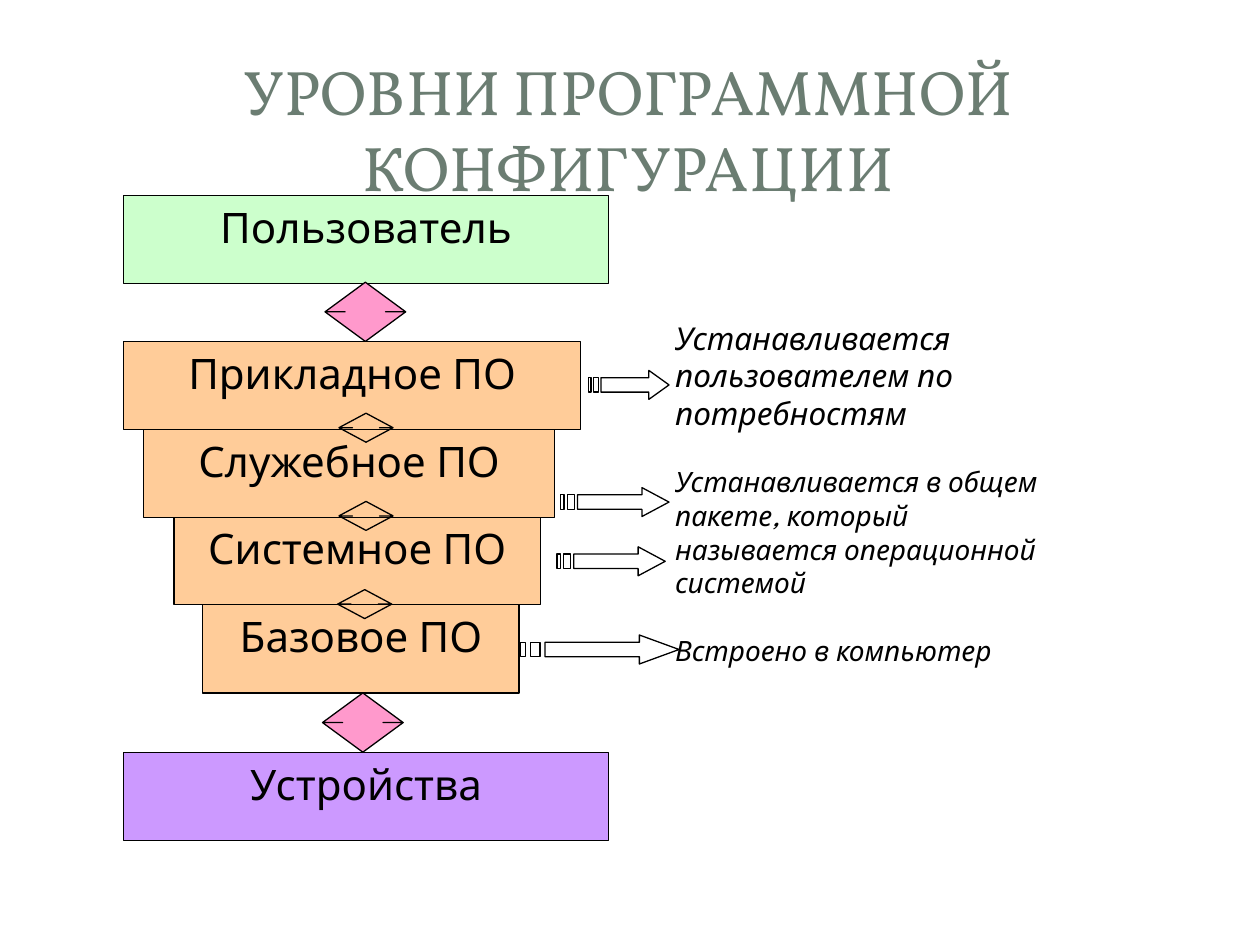
from typing import NamedTuple

from pptx import Presentation
from pptx.dml.color import RGBColor
from pptx.enum.shapes import MSO_SHAPE
from pptx.enum.text import MSO_ANCHOR, MSO_AUTO_SIZE, PP_ALIGN
from pptx.util import Inches, Pt

RECT, UP_DOWN = MSO_SHAPE.RECTANGLE, MSO_SHAPE.UP_DOWN_ARROW
CENTER, LEFT = PP_ALIGN.CENTER, PP_ALIGN.LEFT
TOP, MIDDLE = MSO_ANCHOR.TOP, MSO_ANCHOR.MIDDLE
BODY_FONT, TITLE_FONT = "League Spartan", "Vollkorn"
BLACK, WHITE, ORANGE, PINK = "000000", "FFFFFF", "FFCC99", "FF99CC"
LEVEL_H = 0.7


class Level(NamedTuple):
    text: str
    x: float
    y: float
    w: float
    color: str


class Note(NamedTuple):
    text: str
    y: float
    w: float
    h: float
    size: int


class DoubleArrow(NamedTuple):
    x: float
    y: float
    w: float
    h: float
    color: str | None


class StripedArrow(NamedTuple):
    x: float
    y: float
    w: float


LEVELS = [
    Level("Базовое ПО", 1.61, 4.8, 2.51, ORANGE),
    Level("Системное ПО", 1.38, 4.1, 2.91, ORANGE),
    Level("Служебное ПО", 1.14, 3.41, 3.26, ORANGE),
    Level("Прикладное ПО", 0.98, 2.71, 3.63, ORANGE),
    Level("Пользователь", 0.98, 1.55, 3.85, "CCFFCC"),
    Level("Устройства", 0.98, 5.97, 3.85, "CC99FF"),
]
DOUBLE_ARROWS = [
    DoubleArrow(2.56, 5.5, 0.64, 0.47, PINK),
    DoubleArrow(2.58, 2.24, 0.64, 0.47, PINK),
    DoubleArrow(2.68, 4.68, 0.43, 0.23, None),
    DoubleArrow(2.69, 3.98, 0.43, 0.23, None),
    DoubleArrow(2.69, 3.28, 0.43, 0.23, None),
]
NOTES = [
    Note("Встроено в компьютер", 4.98, 2.78, 0.47, 16),
    Note("Устанавливается в общем пакете, который называется операционной системой",
         3.64, 3.21, 1.15, 16),
    Note("Устанавливается пользователем по потребностям", 2.48, 2.99, 0.93, 18),
]
STRIPED_ARROWS = [
    StripedArrow(4.13, 5.04, 1.26),
    StripedArrow(4.42, 4.34, 0.86),
    StripedArrow(4.45, 3.87, 0.86),
    StripedArrow(4.67, 2.94, 0.64),
]
# Outlines as fractions of the arrow's width and height
STRIPED_OUTLINES = [
    [(3 / 4, 0), (3 / 4, 1 / 4), (5 / 32, 1 / 4), (5 / 32, 3 / 4),
     (3 / 4, 3 / 4), (3 / 4, 1), (1, 1 / 2)],
    *([(a, 1 / 4), (a, 3 / 4), (b, 3 / 4), (b, 1 / 4)]
      for a, b in ((1 / 16, 1 / 8), (0, 1 / 32))),
]


def rgb(color: str) -> RGBColor:
    return RGBColor.from_string(color)


def style(sp, fill: str | None, line: str | None = BLACK) -> None:
    sp.shadow.inherit = False
    if fill:
        sp.fill.solid()
        sp.fill.fore_color.rgb = rgb(fill)
    else:
        sp.fill.background()
    if line:
        sp.line.color.rgb = rgb(line)
        sp.line.width = Pt(0.75)
    else:
        sp.line.fill.background()


def put_text(sp, text: str, size: int, align=CENTER, anchor=TOP, font: str = BODY_FONT,
             color: str = BLACK, italic: bool = False) -> None:
    tf = sp.text_frame
    tf.text = text
    tf.word_wrap = True
    tf.auto_size = MSO_AUTO_SIZE.NONE
    tf.vertical_anchor = anchor
    p = tf.paragraphs[0]
    p.alignment = align
    p.font.name = font
    p.font.size = Pt(size)
    p.font.italic = italic
    p.font.color.rgb = rgb(color)


def add_shape(s, kind, x: float, y: float, w: float, h: float):
    return s.shapes.add_shape(kind, Inches(x), Inches(y), Inches(w), Inches(h))


def add_title(s, text: str) -> None:
    title = s.shapes.title
    title.left, title.top = Inches(0.47), Inches(0.45)
    title.width, title.height = Inches(9.03), Inches(1.14)
    put_text(title, text, 36, anchor=MIDDLE, font=TITLE_FONT, color="6B7D72")


def add_level(s, level: Level) -> None:
    sp = add_shape(s, RECT, level.x, level.y, level.w, LEVEL_H)
    style(sp, level.color)
    put_text(sp, level.text, 24)


def add_double_arrow(s, arrow: DoubleArrow) -> None:
    sp = add_shape(s, UP_DOWN, arrow.x, arrow.y, arrow.w, arrow.h)
    sp.adjustments[0], sp.adjustments[1] = 0.2, 0.5
    style(sp, arrow.color)


def add_note(s, note: Note) -> None:
    sp = add_shape(s, RECT, 5.26, note.y, note.w, note.h)
    style(sp, WHITE, None)
    put_text(sp, note.text, note.size, align=LEFT, italic=True)


def add_striped_arrow(s, arrow: StripedArrow, h: float = 0.23) -> None:
    outlines = [[(Inches(arrow.x + u * arrow.w), Inches(arrow.y + v * h)) for u, v in outline]
                for outline in STRIPED_OUTLINES]
    builder = s.shapes.build_freeform(*outlines[0][0])
    for i, (start, *rest) in enumerate(outlines):
        if i:
            builder.move_to(*start)
        builder.add_line_segments(rest, close=True)
    style(builder.convert_to_shape(), WHITE)


def main() -> None:
    prs = Presentation()
    prs.slide_width, prs.slide_height = Inches(10), Inches(7.5)
    s = prs.slides.add_slide(prs.slide_layouts[5])
    add_title(s, "УРОВНИ ПРОГРАММНОЙ КОНФИГУРАЦИИ")
    for level in LEVELS:
        add_level(s, level)
    for double_arrow in DOUBLE_ARROWS:
        add_double_arrow(s, double_arrow)
    for note in NOTES:
        add_note(s, note)
    for striped_arrow in STRIPED_ARROWS:
        add_striped_arrow(s, striped_arrow)
    prs.save("out.pptx")


if __name__ == "__main__":
    main()
